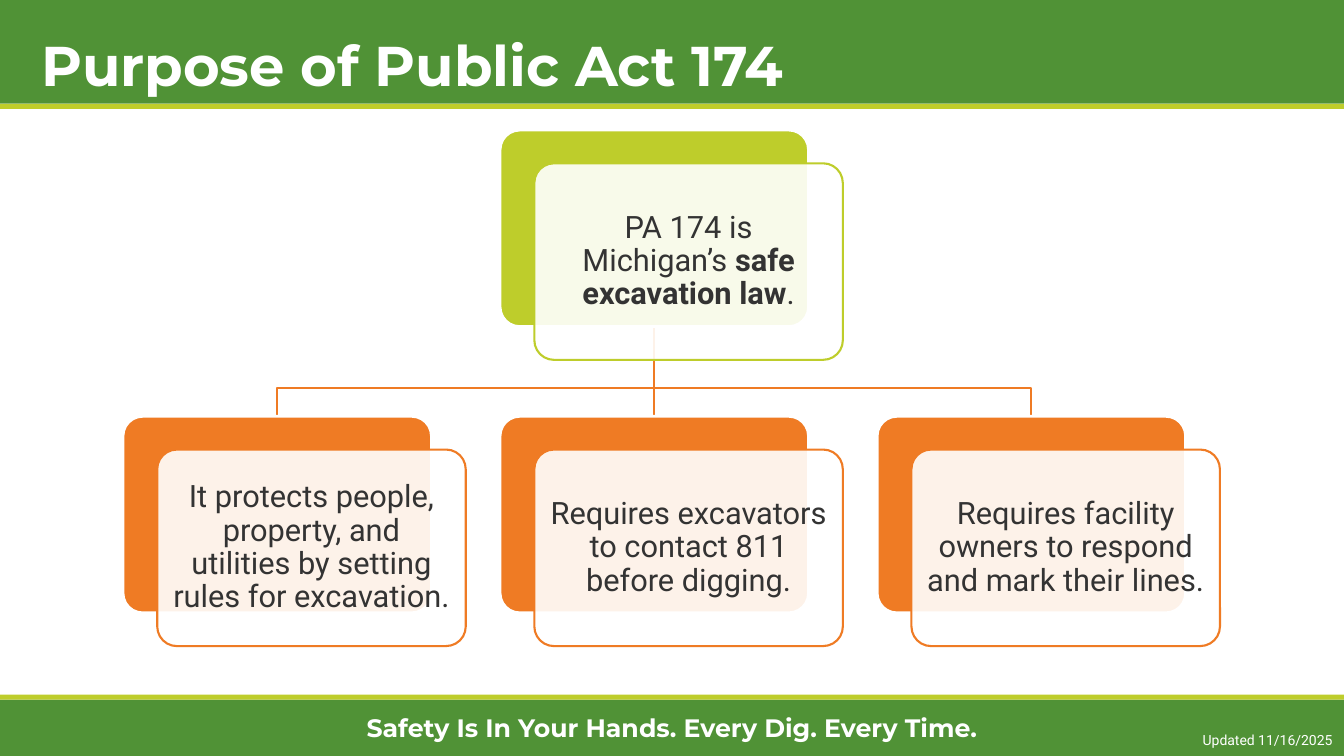
from dataclasses import dataclass

from lxml import etree
from pptx import Presentation
from pptx import util as u
from pptx.dml.color import RGBColor
from pptx.enum import shapes, text
from pptx.oxml.ns import qn

PX = 9144  # EMU per px, 100 px to the inch
SLIDE_W, SLIDE_H = 1333, 750
RULE_H = 5


@dataclass(frozen=True)
class Theme:
    green: str = "509236"
    lime: str = "BECD2B"
    orange: str = "EF7B24"
    white: str = "FFFFFF"
    ink: str = "333333"
    heading_font: str = "Montserrat"
    body_font: str = "Roboto"
    title_size: int = 40
    card_size: int = 22
    motto_size: int = 18
    date_size: int = 10
    line: float = 1.5
    edge: float = 2


THEME = Theme()


def px(*lengths):
    return [u.Emu(length * PX) for length in lengths]


def rgb(color):
    return RGBColor.from_string(color)


def apply(target, values):
    for name, value in values.items():
        setattr(target, name, value)


def set_line(line, color, width):
    line.color.rgb = rgb(color)
    line.width = u.Pt(width)


def add_block(slide, box, fill, kind=shapes.MSO_SHAPE.RECTANGLE):
    block = slide.shapes.add_shape(kind, *px(*box))
    block.shadow.inherit = False
    block.fill.solid()
    block.fill.fore_color.rgb = rgb(fill)
    block.line.fill.background()
    return block


def write(frame, runs, font, size, color, frame_format, paragraph_format):
    """Write (wording, bold) runs as one paragraph."""
    apply(frame, frame_format)
    paragraph = frame.paragraphs[0]
    apply(paragraph, paragraph_format)
    for wording, bold in runs:
        run = paragraph.add_run()
        run.text = wording
        apply(run.font, {"name": font, "size": u.Pt(size), "bold": bold})
        run.font.color.rgb = rgb(color)


def add_header(slide, box, title):
    left, top, width, height = box
    add_block(slide, box, THEME.green)
    add_block(slide, (left, top + height, width, RULE_H), THEME.lime)
    heading = slide.shapes.add_textbox(*px(left + 31, top + 2, width - 62, height - 2))
    write(heading.text_frame, [(title, True)], THEME.heading_font, THEME.title_size, THEME.white,
          {"word_wrap": True, "vertical_anchor": text.MSO_ANCHOR.BOTTOM}, {"line_spacing": 0.9})


def add_footer(slide, box, motto, updated):
    left, top, width, height = box
    band = add_block(slide, box, THEME.green)
    write(band.text_frame, [(motto, True)], THEME.heading_font, THEME.motto_size, THEME.white,
          {"word_wrap": True, "vertical_anchor": text.MSO_ANCHOR.MIDDLE},
          {"alignment": text.PP_ALIGN.CENTER})
    add_block(slide, (left, top - RULE_H, width, RULE_H), THEME.lime)
    date = slide.shapes.add_textbox(*px(left + width - 150, top + 27, 150, 27))
    write(date.text_frame, [(updated, False)], THEME.body_font, THEME.date_size, THEME.white,
          {"word_wrap": False}, {"alignment": text.PP_ALIGN.LEFT})


def add_card(slide, box, color, runs):
    """A coloured plate with an outlined, nearly opaque white panel shifted over it."""
    left, top, width, height = box
    rounded = shapes.MSO_SHAPE.ROUNDED_RECTANGLE
    plate = add_block(slide, box, color, rounded)
    set_line(plate.line, THEME.white, THEME.edge)
    panel = add_block(slide, (left + 34, top + 33, width, height), THEME.white, rounded)
    set_line(panel.line, color, THEME.line)
    plate.adjustments[0] = panel.adjustments[0] = 0.1
    # Panel opacity
    tint = panel.fill._xPr.find(qn("a:solidFill"))[0]
    etree.SubElement(tint, qn("a:alpha"), val="90000")
    inset, = px(9)
    sides = ("margin_left", "margin_top", "margin_right", "margin_bottom")
    write(panel.text_frame, runs, THEME.body_font, THEME.card_size, THEME.ink,
          {"word_wrap": True, "vertical_anchor": text.MSO_ANCHOR.MIDDLE,
           **dict.fromkeys(sides, inset)},
          {"alignment": text.PP_ALIGN.CENTER, "line_spacing": 0.9})


def add_branches(slide, start, ends, bar_y):
    """Lines from the law down to each purpose, bending at bar_y."""
    x, y = start
    for end_x, end_y in ends:
        if end_x == x:
            branch = slide.shapes.add_connector(
                shapes.MSO_CONNECTOR.STRAIGHT, *px(x, y, end_x, end_y))
            etree.SubElement(branch._element.spPr, qn("a:effectLst"))
        else:
            builder = slide.shapes.build_freeform(x, y, scale=PX)
            builder.add_line_segments([(x, bar_y), (end_x, bar_y), (end_x, end_y)], close=False)
            branch = builder.convert_to_shape()
            branch.shadow.inherit = False
            branch.fill.background()
        set_line(branch.line, THEME.orange, THEME.line)


def add_purpose_tree(slide, box, law, purposes):
    left, top, width, _ = box
    card_w, card_h, row_gap = 306, 195, 89
    pitch = (width - 340) // (len(purposes) - 1)
    row_y = top + card_h + row_gap
    lefts = [left + i * pitch for i in range(len(purposes))]
    law_left = lefts[len(lefts) // 2]
    centre = card_w // 2
    add_branches(slide, (law_left + centre, top + card_h),
                 [(x + centre, row_y) for x in lefts], row_y - 28)
    add_card(slide, (law_left, top, card_w, card_h), THEME.lime, law)
    for x, purpose in zip(lefts, purposes):
        add_card(slide, (x, row_y, card_w, card_h), THEME.orange, [(purpose, False)])


def main():
    deck = Presentation()
    deck.slide_width, deck.slide_height = px(SLIDE_W, SLIDE_H)
    slide = deck.slides.add_slide(deck.slide_layouts[6])
    add_footer(slide, (0, 694, SLIDE_W, 56),
               "Safety Is In Your Hands. Every Dig. Every Time.", "Updated 11/16/2025")
    add_header(slide, (0, 0, SLIDE_W, 103), "Purpose of Public Act 174")
    add_purpose_tree(
        slide, (122, 129, 1089, 511),
        [("PA 174 is Michigan’s ", False), ("safe excavation law", True), (".", False)],
        ["It protects people, property, and utilities by setting rules for excavation.",
         "Requires excavators to contact 811 before digging.",
         "Requires facility owners to respond and mark their lines."])
    deck.save("out.pptx")


if __name__ == "__main__":
    main()
